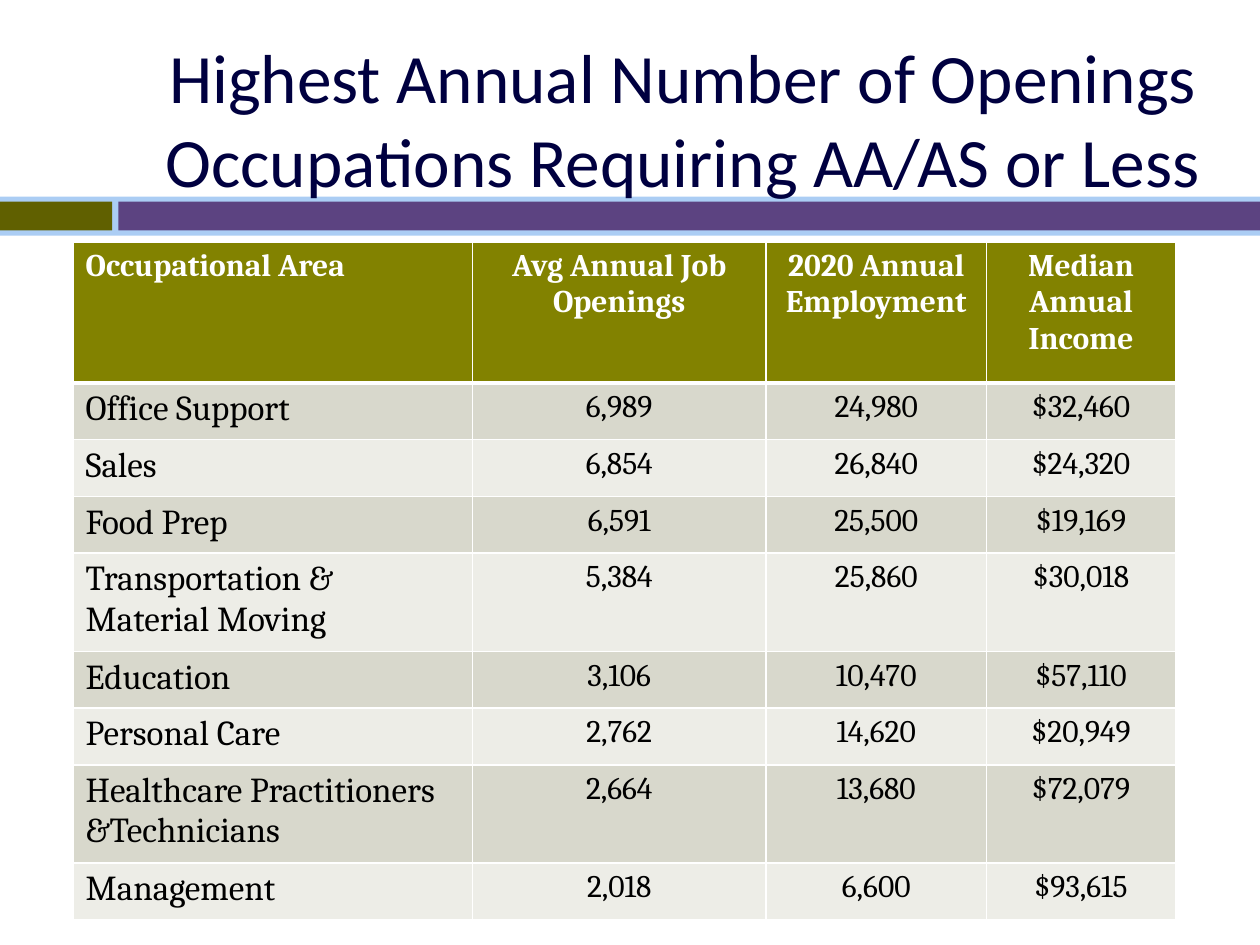
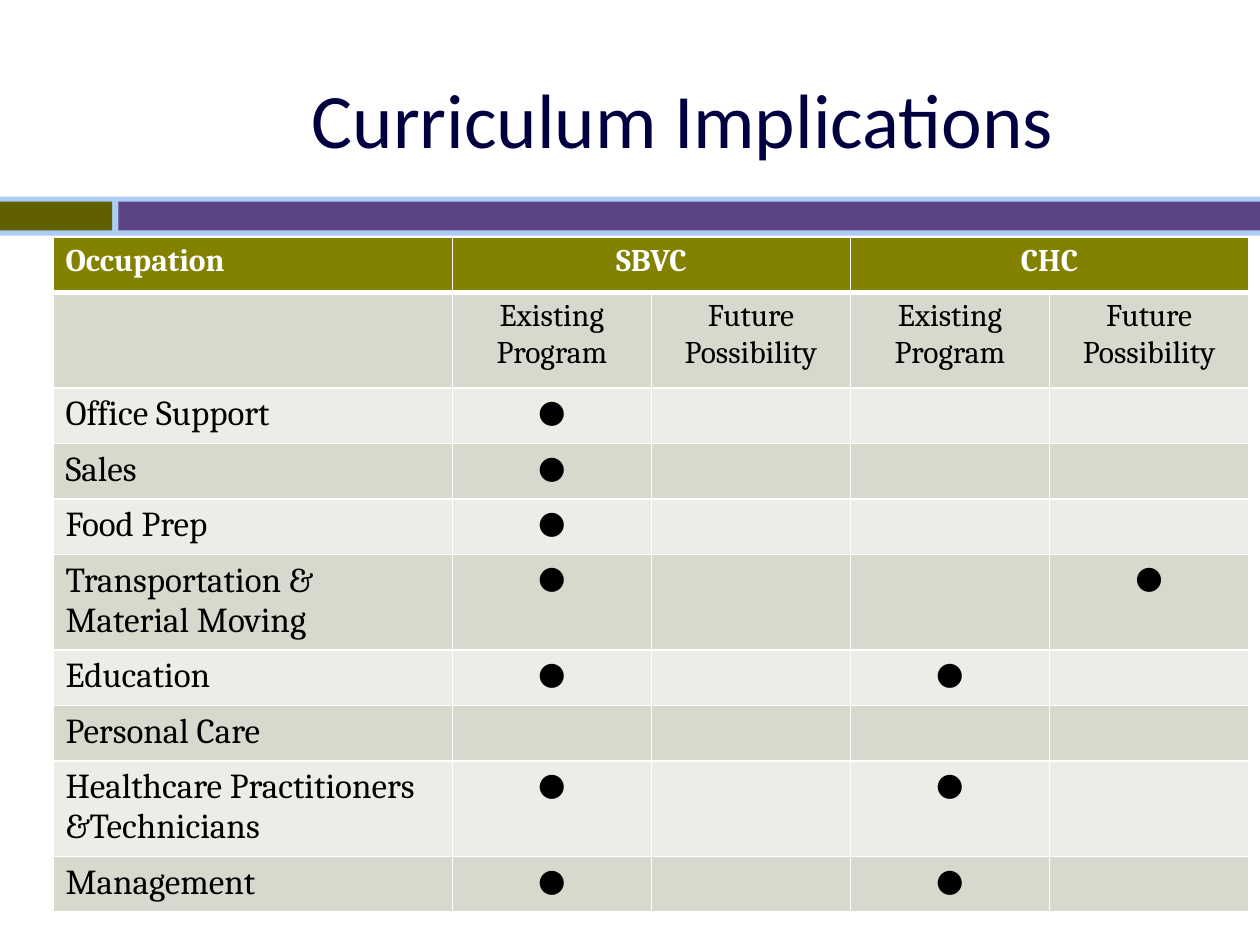
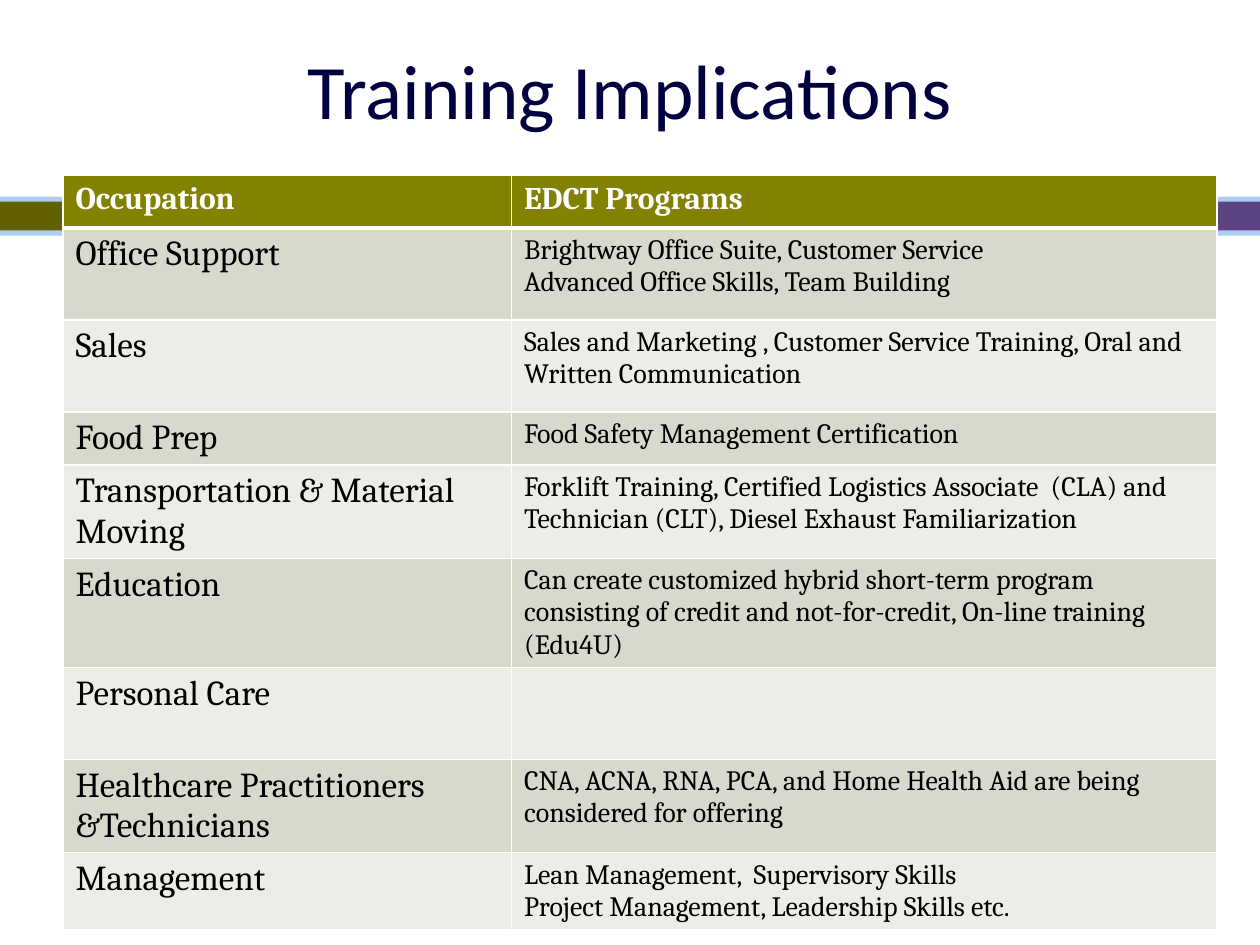
from lxml import etree
from pptx import Presentation
from pptx.dml.color import RGBColor
from pptx.enum.shapes import MSO_SHAPE
from pptx.enum.text import MSO_ANCHOR, MSO_AUTO_SIZE, PP_ALIGN
from pptx.oxml.ns import qn
from pptx.util import Inches, Pt

RECTANGLE = MSO_SHAPE.RECTANGLE
MIDDLE = MSO_ANCHOR.MIDDLE
NO_FIT = MSO_AUTO_SIZE.NONE
LEFT, CENTER = PP_ALIGN.LEFT, PP_ALIGN.CENTER

COLORS = {
    "title": "000040",
    "sky": "ABCDF4",
    "olive": "606000",
    "purple": "5C4381",
    "header": "828200",
    "dark_row": "D8D8CC",
    "light_row": "EDEDE7",
    "white": "FFFFFF",
    "black": "000000",
}
BANDS = [
    ("sky", (0, 1.56, 10, 0.31)),
    ("olive", (0, 1.6, 0.89, 0.23)),
    ("purple", (0.94, 1.6, 9.06, 0.23)),
]
TITLE_BOX = (0.92, 0.31, 9, 1.25)
HEADER_FONT = {"name": "Cambria", "size": Pt(18), "bold": True}
LABEL_FONT = {"name": "Cambria", "size": Pt(20), "bold": False}
VALUE_FONT = {"name": "Cambria", "size": Pt(18), "bold": False}
NOTE_FONT = {"name": "Cambria", "size": Pt(16), "bold": False}

OCCUPATIONS = [
    "Office Support",
    "Sales",
    "Food Prep",
    "Transportation & Material Moving",
    "Education",
    "Personal Care",
    "Healthcare Practitioners &Technicians",
    "Management",
]
OPENINGS_HEADER = ["Occupational Area", "Avg Annual Job Openings",
                   "2020 Annual Employment", "Median Annual Income"]
OPENINGS = [
    ("6,989", "24,980", "$32,460"),
    ("6,854", "26,840", "$24,320"),
    ("6,591", "25,500", "$19,169"),
    ("5,384", "25,860", "$30,018"),
    ("3,106", "10,470", "$57,110"),
    ("2,762", "14,620", "$20,949"),
    ("2,664", "13,680", "$72,079"),
    ("2,018", "6,600", "$93,615"),
]
CURRICULUM_HEADER = ["Occupation", "SBVC", "", "CHC", ""]
PROGRAM_STAGES = ["Existing Program", "Future Possibility"]
PROGRAM_MARKS = [
    ("●", "", "", ""),
    ("●", "", "", ""),
    ("●", "", "", ""),
    ("●", "", "", "●"),
    ("●", "", "●", ""),
    ("", "", "", ""),
    ("●", "", "●", ""),
    ("●", "", "●", ""),
]
TRAINING_HEADER = ["Occupation", "EDCT Programs"]
TRAINING = [
    "Brightway Office Suite, Customer Service\nAdvanced Office Skills, Team Building",
    "Sales and Marketing , Customer Service Training, Oral and Written Communication",
    "Food Safety Management Certification",
    "Forklift Training, Certified Logistics Associate  (CLA) and Technician (CLT), "
    "Diesel Exhaust Familiarization",
    "Can create customized hybrid short-term program consisting of credit and "
    "not-for-credit, On-line training (Edu4U)",
    "",
    "CNA, ACNA, RNA, PCA, and Home Health Aid are being considered for offering",
    "Lean Management,  Supervisory Skills\nProject Management, Leadership Skills etc.",
]


def color(name):
    return RGBColor.from_string(COLORS[name])


def place(shape, box):
    for side, length in zip(("left", "top", "width", "height"), box):
        setattr(shape, side, Inches(length))


def format_font(font, values, color_name):
    for key, value in values.items():
        setattr(font, key, value)
    font.color.rgb = color(color_name)


def move_bands_to_layout(page, layout):
    for index, (color_name, box) in enumerate(BANDS):
        band = page.shapes.add_shape(RECTANGLE, *map(Inches, box))
        band.shadow.inherit = False
        band.fill.solid()
        band.fill.fore_color.rgb = color(color_name)
        band.line.fill.background()
        band.element.xpath(".//p:cNvPr")[0].set("id", str(20 + index))
        layout.shapes.element.insert(2 + index, band.element)


def set_title(page, text, size=44, box=None):
    title = page.shapes.title
    if box:
        place(title, box)
    frame = title.text_frame
    frame.text = text
    frame.auto_size = NO_FIT
    frame.vertical_anchor = MIDDLE
    para = frame.paragraphs[0]
    para.alignment = CENTER
    format_font(para.runs[0].font, {"name": "Calibri", "size": Pt(size)}, "title")


def set_borders(cell, top, bottom):
    properties = cell._tc.get_or_add_tcPr()
    for side, width in (("L", 1), ("R", 1), ("T", top), ("B", bottom)):
        line = etree.SubElement(properties, qn(f"a:ln{side}"), w=str(Pt(width)))
        fill = etree.SubElement(line, qn("a:solidFill"))
        etree.SubElement(fill, qn("a:srgbClr"), val=COLORS["white"])


def fill_cell(cell, text, row, font, alignment):
    set_borders(cell, 3 if row == 1 else 1, 3 if row == 0 else 1)
    cell.fill.solid()
    row_fill = "header" if row == 0 else ("light_row", "dark_row")[row % 2]
    cell.fill.fore_color.rgb = color(row_fill)
    cell.text = text
    for para in cell.text_frame.paragraphs:
        para.alignment = alignment
        for span in para.runs:
            format_font(span.font, font, "white" if row == 0 else "black")


def add_grid(page, corner, widths, heights, rows, value_font, value_alignment):
    size = (sum(widths), sum(heights))
    frame = page.shapes.add_table(len(rows), len(widths), *map(Inches, corner + size))
    table = frame.table
    for column, width in zip(table.columns, widths):
        column.width = Inches(width)
    for table_row, height in zip(table.rows, heights):
        table_row.height = Inches(height)
    for row, texts in enumerate(rows):
        for column, text in enumerate(texts):
            body_font = value_font if column else LABEL_FONT
            fill_cell(table.cell(row, column), text, row,
                      HEADER_FONT if row == 0 else body_font,
                      value_alignment if column else LEFT)
    return table


def label_rows(values):
    return [[occupation, *cells] for occupation, cells in zip(OCCUPATIONS, values)]


def row_heights(single, double):
    return [double if len(name) > 20 else single for name in OCCUPATIONS]


def main():
    deck = Presentation()
    deck.slide_width, deck.slide_height = Inches(10), Inches(7.5)
    layout = deck.slide_layouts[5]
    place(layout.placeholders[0], TITLE_BOX)
    openings, curriculum, training = [deck.slides.add_slide(layout) for _ in range(3)]
    move_bands_to_layout(openings, layout)

    set_title(openings, "Highest Annual Number of Openings Occupations Requiring AA/AS or Less", 39.6)
    add_grid(openings, (0.58, 1.92), [3.17, 2.33, 1.75, 1.5],
             [1.12] + row_heights(0.45, 0.78),
             [OPENINGS_HEADER] + label_rows(OPENINGS), VALUE_FONT, CENTER)

    set_title(curriculum, "Curriculum Implications")
    table = add_grid(curriculum, (0.42, 1.88), [3.17] + [1.58] * 4,
                     [0.44, 0.76] + row_heights(0.44, 0.76),
                     [CURRICULUM_HEADER, ["", *PROGRAM_STAGES * 2]] + label_rows(PROGRAM_MARKS),
                     VALUE_FONT, CENTER)
    for column in (1, 3):
        table.cell(0, column).merge(table.cell(0, column + 1))

    set_title(training, "Training Implications", box=(0.5, 0.08, 9, 1.25))
    add_grid(training, (0.5, 1.39), [3.56, 5.6],
             [0.42, 0.73, 0.73, 0.42] + [0.73] * 4 + [0.42],
             [TRAINING_HEADER] + label_rows([note] for note in TRAINING), NOTE_FONT, LEFT)

    deck.save("out.pptx")


if __name__ == "__main__":
    main()
